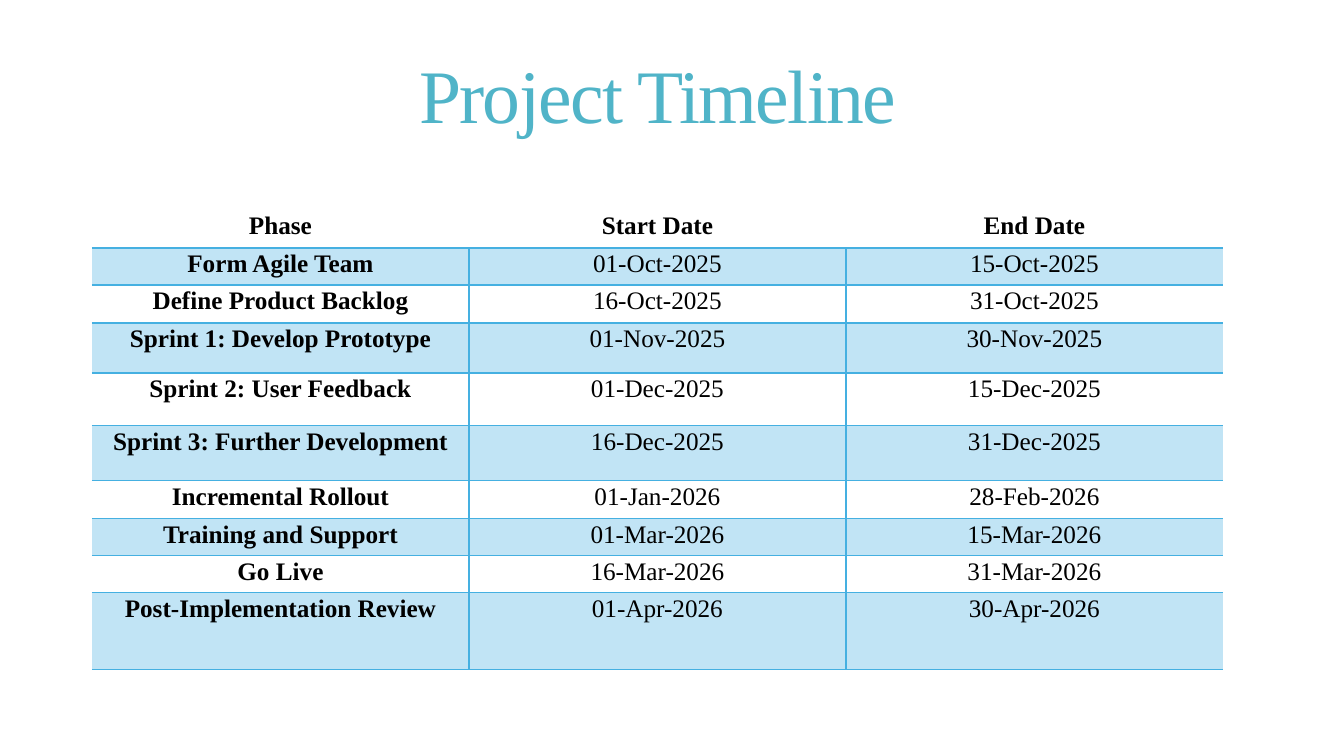
from lxml.etree import SubElement
from pptx import Presentation
from pptx.dml.color import RGBColor
from pptx.enum.text import MSO_ANCHOR, PP_ALIGN
from pptx.oxml.ns import qn
from pptx.util import Pt

PX = 914400 / 100.8
FONT = "Times New Roman"
TEAL, BLACK, WHITE = "50B4C8", "000000", "FFFFFF"
BAND, RULE = "C1E4F5", "45B0E1"


def px(length):
    return round(length * PX)


def add_run(paragraph, text, size, color, bold=False):
    paragraph.alignment = PP_ALIGN.CENTER
    run = paragraph.add_run()
    run.text = text
    run.font.name = FONT
    run.font.size = Pt(size)
    run.font.bold = bold
    run.font.color.rgb = RGBColor.from_string(color)
    return run


prs = Presentation()
prs.slide_width, prs.slide_height = px(1344), px(756)
slide = prs.slides.add_slide(prs.slide_layouts[6])

# Title
title = slide.shapes.add_textbox(px(64), px(25), px(1187), px(151)).text_frame
title.word_wrap = True
title.vertical_anchor = MSO_ANCHOR.MIDDLE
heading = title.paragraphs[0]
heading.line_spacing = 0.85
heading_run = add_run(heading, "Project Timeline", 54, TEAL)
heading_run.font._element.set("spc", "-120")

# Phases with their dates and row heights
phases = [
    ("Phase", "Start Date", "End Date", 38),
    ("Form Agile Team", "01-Oct-2025", "15-Oct-2025", 37),
    ("Define Product Backlog", "16-Oct-2025", "31-Oct-2025", 38),
    ("Sprint 1: Develop Prototype", "01-Nov-2025", "30-Nov-2025", 50),
    ("Sprint 2: User Feedback", "01-Dec-2025", "15-Dec-2025", 53),
    ("Sprint 3: Further Development", "16-Dec-2025", "31-Dec-2025", 55),
    ("Incremental Rollout", "01-Jan-2026", "28-Feb-2026", 38),
    ("Training and Support", "01-Mar-2026", "15-Mar-2026", 37),
    ("Go Live", "16-Mar-2026", "31-Mar-2026", 37),
    ("Post-Implementation Review", "01-Apr-2026", "30-Apr-2026", 77),
]
table_height = sum(phase[-1] for phase in phases)
timeline = slide.shapes.add_table(
    len(phases), 3, px(92), px(210), px(1131), px(table_height)).table
timeline.first_row = timeline.horz_banding = False
for column in timeline.columns:
    column.width = px(377)

for row, (*texts, height) in enumerate(phases):
    timeline.rows[row].height = px(height)
    for col, text in enumerate(texts):
        cell = timeline.cell(row, col)
        cell.margin_left = cell.margin_right = px(7)
        cell.margin_top = cell.margin_bottom = 0
        paragraph = cell.text_frame.paragraphs[0]
        paragraph.line_spacing = 1.07
        paragraph.space_after = Pt(8)
        add_run(paragraph, text, 18, BLACK, bold=row == 0 or col == 0)

        # Rules inside the table and below it, heavier under the header
        widths = {
            "a:lnL": 1 if row > 0 and col > 0 else 0,
            "a:lnR": 1 if row > 0 and col < 2 else 0,
            "a:lnT": (0, 1.5)[row] if row < 2 else 1,
            "a:lnB": 1.5 if row == 0 else 1,
        }
        properties = cell._tc.get_or_add_tcPr()
        for side, width in widths.items():
            line = SubElement(properties, qn(side), w=str(Pt(width)))
            if width:
                fill = SubElement(line, qn("a:solidFill"))
                SubElement(fill, qn("a:srgbClr"), val=RULE)
            else:
                SubElement(line, qn("a:noFill"))

        cell.fill.solid()
        cell.fill.fore_color.rgb = RGBColor.from_string(BAND if row % 2 else WHITE)

prs.save("out.pptx")
